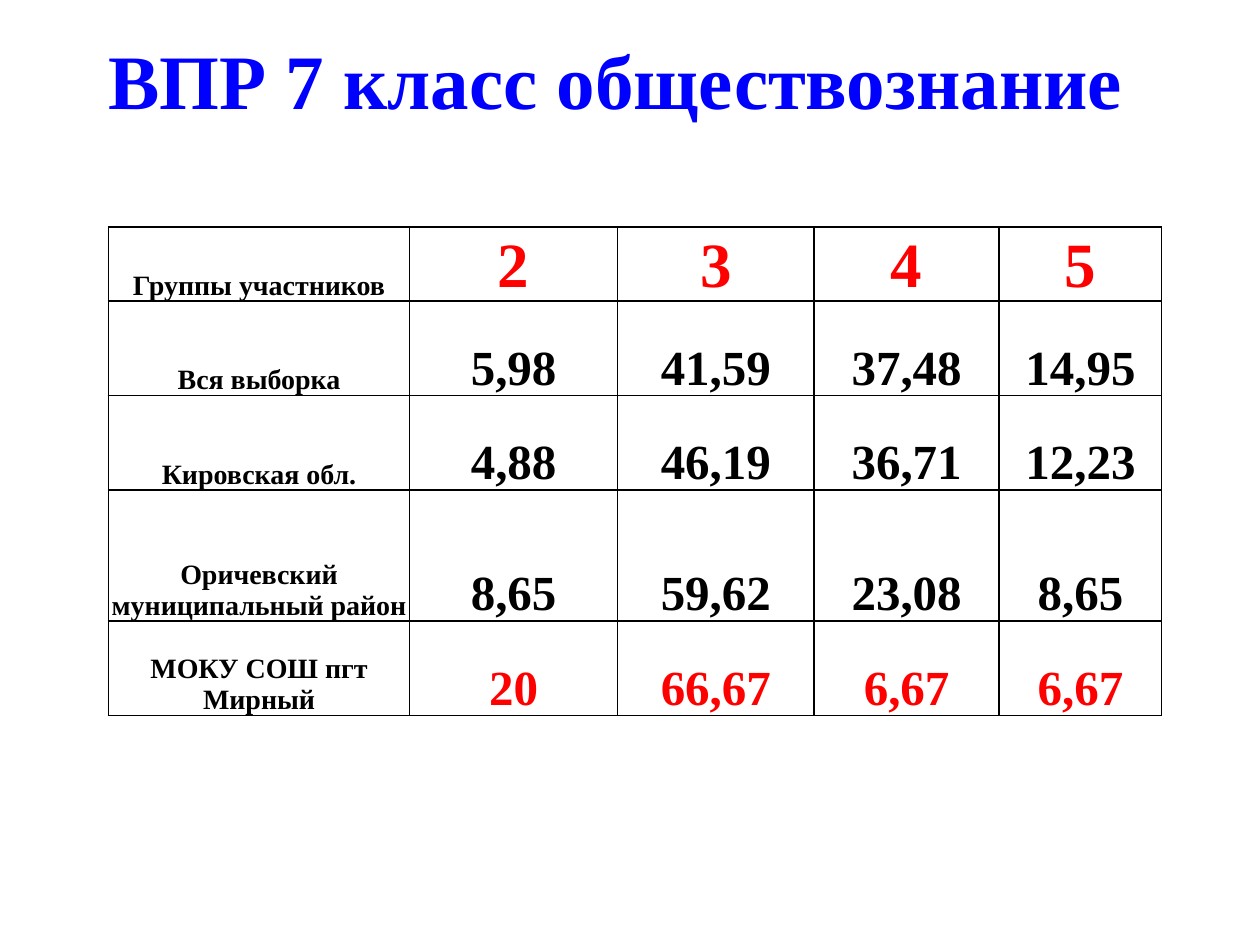
from lxml.etree import SubElement
from pptx import Presentation
from pptx.dml.color import RGBColor
from pptx.enum.text import MSO_ANCHOR, PP_ALIGN
from pptx.oxml.ns import qn
from pptx.util import Pt

COLORS = {"title": "0000FF", "text": "000000", "mark": "FF0000",
          "line": "000000", "back": "FFFFFF"}
COLS = [172.1, 118.8, 112.3, 105.8, 92.9]
HEIGHTS = [42.5, 54, 54, 74.9, 54]
ROWS = [
    ["Группы участников", "2", "3", "4", "5"],
    ["Вся выборка", "5,98", "41,59", "37,48", "14,95"],
    ["Кировская обл.", "4,88", "46,19", "36,71", "12,23"],
    ["Оричевский муниципальный район", "8,65", "59,62", "23,08", "8,65"],
    ["МОКУ СОШ пгт Мирный", "20", "66,67", "6,67", "6,67"],
]


class Deck:
    font = "Times New Roman"

    def __init__(self, width, height):
        self.prs = Presentation()
        self.prs.slide_width, self.prs.slide_height = Pt(width), Pt(height)
        self.slide = self.prs.slides.add_slide(self.prs.slide_layouts[5])

    def label(self, frame, text, size, color):
        """Fill a text frame with one centred bold paragraph."""
        frame.text = text
        para = frame.paragraphs[0]
        para.alignment = PP_ALIGN.CENTER
        font = para.runs[0].font
        font.name, font.size, font.bold = self.font, Pt(size), True
        font.color.rgb = RGBColor.from_string(COLORS[color])

    def title(self, text, left, top, width, height):
        shape = self.slide.shapes.title
        shape.left, shape.top = Pt(left), Pt(top)
        shape.width, shape.height = Pt(width), Pt(height)
        shape.text_frame.vertical_anchor = MSO_ANCHOR.MIDDLE
        self.label(shape.text_frame, text, 44, "title")

    def table(self, rows, left, top, cols, heights):
        frame = self.slide.shapes.add_table(
            len(rows), len(cols), Pt(left), Pt(top),
            Pt(sum(cols)), Pt(sum(heights)))
        grid = frame.table
        for col, width in zip(grid.columns, cols):
            col.width = Pt(width)
        for row, height in zip(grid.rows, heights):
            row.height = Pt(height)
        last = len(rows) - 1
        for r, row in enumerate(rows):
            for c, text in enumerate(row):
                size = 16 if c == 0 else 36 if r == 0 else 28
                color = "mark" if c and r in (0, last) else "text"
                self.cell(grid.cell(r, c), text, size, color)

    def cell(self, cell, text, size, color):
        self.label(cell.text_frame, text, size, color)
        cell.vertical_anchor = MSO_ANCHOR.BOTTOM
        cell.margin_left = cell.margin_right = cell.margin_top = Pt(0.7)
        cell.margin_bottom = 0
        self.border(cell)
        cell.fill.solid()
        cell.fill.fore_color.rgb = RGBColor.from_string(COLORS["back"])

    def border(self, cell):
        props = cell._tc.get_or_add_tcPr()
        for side in "LRTB":
            line = SubElement(props, qn(f"a:ln{side}"), w=str(Pt(1)))
            fill = SubElement(line, qn("a:solidFill"))
            SubElement(fill, qn("a:srgbClr"), val=COLORS["line"])


def main():
    deck = Deck(720, 540)
    deck.title("ВПР 7 класс обществознание", 28, 0, 648, 90)
    deck.table(ROWS, 62, 129.6, COLS, HEIGHTS)
    deck.prs.save("out.pptx")


if __name__ == "__main__":
    main()
